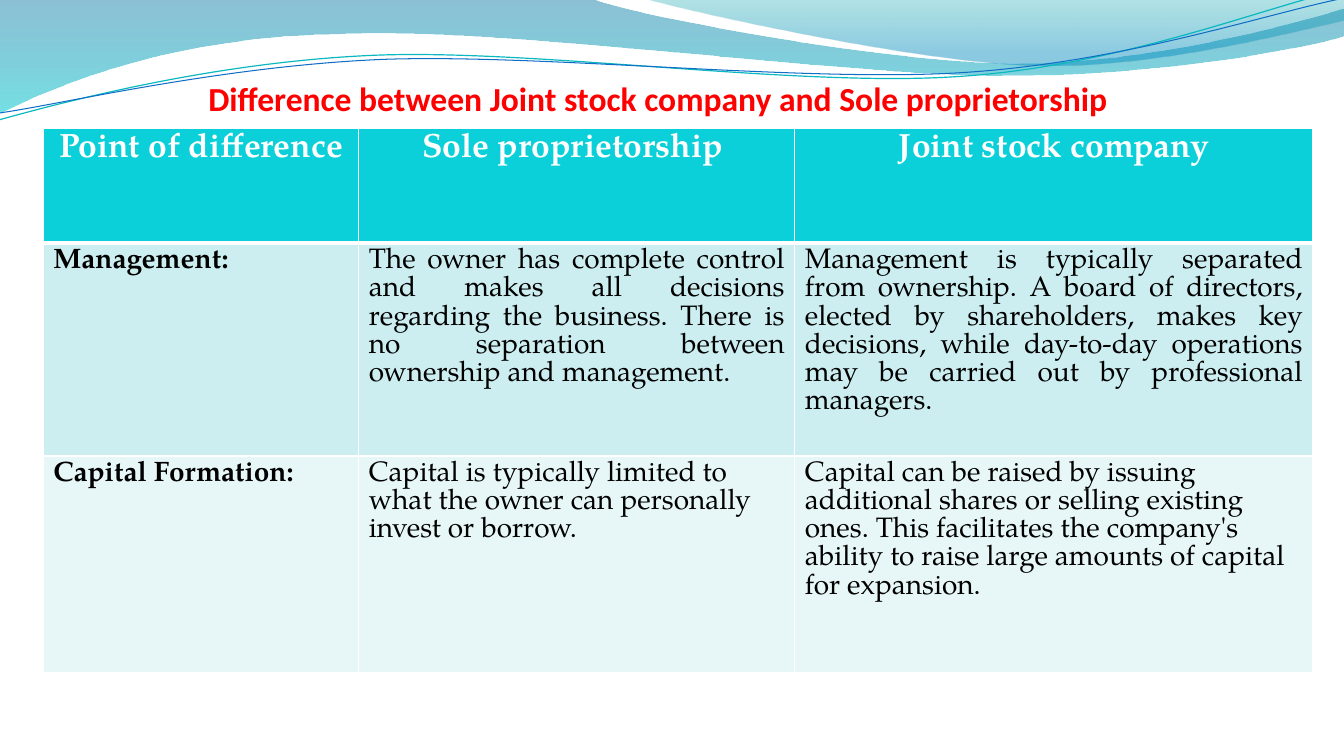
from math import cos, radians, sin

from lxml import etree
from pptx import Presentation
from pptx.dml.color import RGBColor
from pptx.enum.text import PP_ALIGN
from pptx.oxml.ns import qn
from pptx.util import Cm, Pt

CENTER, JUSTIFY, LEFT = PP_ALIGN.CENTER, PP_ALIGN.JUSTIFY, PP_ALIGN.LEFT
BODY_FONT, TITLE_FONT = "TeX Gyre Pagella", "Calibri"

# Content
TITLE = "Difference between Joint stock company and Sole proprietorship "
ROWS = [
    ("Point of difference", "Sole proprietorship ", "Joint stock company"),
    ("Management:",
     "The owner has complete control and makes all decisions regarding the business. "
     "There is no separation between ownership and management.",
     "Management is typically separated from ownership. A board of directors, elected by "
     "shareholders, makes key decisions, while day-to-day operations may be carried out "
     "by professional managers."),
    ("Capital Formation:",
     "Capital is typically limited to what the owner can personally invest or borrow.",
     "Capital can be raised by issuing additional shares or selling existing ones. This "
     "facilitates the company's ability to raise large amounts of capital for expansion."),
]
COLUMN_WIDTHS = (7.95, 10.99, 13.06)
# Height, fill, alignment, text size, text colour, bottom border of each row
ROW_STYLES = [
    (2.9, "0BD0D9", CENTER, 24, "FFFFFF", 3),
    (5.36, "CCEEF1", JUSTIFY, 20, "000000", 1),
    (5.46, "E7F7F8", LEFT, 20, "000000", 1),
]

# Outlines in inches: a pair is a straight step, six numbers are a Bézier step
WAVES = [
    ([(0, 0), (5.87, -0.01), (6.34, 0.17, 8.85, 0.63, 10.11, 0.63),
      (11.38, 0.63, 12.78, 0.26, 13.33, 0.09), (13.35, 0.36),
      (13.11, 0.44, 11.6, 0.76, 9.94, 0.75), (8.29, 0.75, 5.09, 0.28, 3.43, 0.34),
      (1.72, 0.36, 0.61, 0.83, -0.01, 1.13)],
     [(0, "0074A1", 45), (1, "00C6CF", 55)]),
    ([(6.39, -0.01), (6.79, 0.11, 9.09, 0.62, 10.25, 0.65),
      (11.41, 0.69, 12.82, 0.32, 13.33, 0.21), (13.33, 0)],
     [(0, "00A1A9", 30), (0.8, "008BBF", 45)]),
]
STRANDS = [
    ([(-0.01, 1.19), (0.64, 1.01, 2.11, 0.62, 3.69, 0.55),
      (5.27, 0.48, 7.9, 0.87, 9.5, 0.76), (11.1, 0.66, 12.52, 0.08, 13.31, -0.1)],
     "0AB8BF", 0.85),
    ([(0, 1.12), (0.63, 1.03, 2.18, 0.66, 3.78, 0.59),
      (5.37, 0.53, 7.96, 0.82, 9.55, 0.72), (11.15, 0.62, 12.55, 0.14, 13.34, -0.02)],
     "0F6FC6", 0.75),
]
STRAND_TILT = -2.7
STRAND_CENTER = (6.66, 0.57)


def color(hex_string):
    return RGBColor.from_string(hex_string)


def write(frame, text, *, size, font, ink, bold=False, align=LEFT):
    paragraph = frame.paragraphs[0]
    paragraph.alignment = align
    run = paragraph.add_run()
    run.text = text
    run.font.size, run.font.name, run.font.bold = Pt(size), font, bold
    run.font.color.rgb = color(ink)


def place(step, tilt):
    """Give the points of a step in slide units, with the tilt taken out."""
    center_x, center_y = STRAND_CENTER
    angle = radians(-tilt)
    points = []
    for x, y in zip(step[::2], step[1::2]):
        dx, dy = x - center_x, y - center_y
        points.append((Cm(2.54 * (center_x + dx * cos(angle) - dy * sin(angle))),
                       Cm(2.54 * (center_y + dx * sin(angle) + dy * cos(angle)))))
    return points


def add_outline(slide, steps, *, close, tilt=0):
    start, *segments = [place(step, tilt) for step in steps]
    builder = slide.shapes.build_freeform(*start[0])
    builder.add_line_segments([points[-1] for points in segments], close=close)
    shape = builder.convert_to_shape()
    # Bend the segments that have control points
    lines = list(shape._element.iter(qn("a:lnTo")))
    for line, points in zip(lines, segments):
        if len(points) == 3:
            curve = etree.Element(qn("a:cubicBezTo"))
            for x, y in points:
                etree.SubElement(curve, qn("a:pt"),
                                 x=str(x - shape.left), y=str(y - shape.top))
            line.getparent().replace(line, curve)
    shape.rotation = tilt
    shape.shadow.inherit = False
    return shape


def add_wave(slide, steps, stops):
    wave = add_outline(slide, steps, close=True)
    wave.line.fill.background()
    wave.fill.gradient()
    wave.fill.gradient_angle = 270
    for stop, (position, tint, _) in zip(wave.fill.gradient_stops, stops):
        stop.position = position
        stop.color.rgb = color(tint)
    tints = list(wave._element.spPr.iter(qn("a:srgbClr")))
    for tint_xml, (_, _, opacity) in zip(tints, stops):
        etree.SubElement(tint_xml, qn("a:alpha"), val=str(opacity * 1000))


def add_strand(slide, steps, ink, width):
    strand = add_outline(slide, steps, close=False, tilt=STRAND_TILT)
    strand.fill.background()
    strand.line.color.rgb = color(ink)
    strand.line.width = Pt(width)


def set_borders(cell, widths):
    properties = cell._tc.get_or_add_tcPr()
    for index, (side, width) in enumerate(widths.items()):
        border = etree.Element(qn(f"a:ln{side}"), w=str(Pt(width)))
        fill = etree.SubElement(border, qn("a:solidFill"))
        etree.SubElement(fill, qn("a:srgbClr"), val="FFFFFF")
        properties.insert(index, border)


def add_comparison(slide):
    table = slide.shapes.add_table(
        len(ROWS), len(COLUMN_WIDTHS), Cm(1.09), Cm(3.23), Cm(sum(COLUMN_WIDTHS)),
        Cm(sum(style[0] for style in ROW_STYLES))).table
    for column, width in zip(table.columns, COLUMN_WIDTHS):
        column.width = Cm(width)
    top_border = 1
    for r, (texts, style) in enumerate(zip(ROWS, ROW_STYLES)):
        height, fill, align, size, ink, bottom_border = style
        table.rows[r].height = Cm(height)
        for c, text in enumerate(texts):
            cell = table.cell(r, c)
            cell.fill.solid()
            cell.fill.fore_color.rgb = color(fill)
            set_borders(cell, {"L": 1, "R": 1, "T": top_border, "B": bottom_border})
            write(cell.text_frame, text, size=size, font=BODY_FONT, ink=ink,
                  bold=r == 0 or c == 0, align=align)
        top_border = bottom_border


def main():
    deck = Presentation()
    deck.slide_width, deck.slide_height = Cm(33.87), Cm(19.05)
    slide = deck.slides.add_slide(deck.slide_layouts[6])

    # Waves along the top edge
    for steps, stops in WAVES:
        add_wave(slide, steps, stops)
    for steps, ink, width in STRANDS:
        add_strand(slide, steps, ink, width)

    # Table and title
    add_comparison(slide)
    title = slide.shapes.add_textbox(Cm(5), Cm(1.85), Cm(26.14), Cm(1.27)).text_frame
    title.word_wrap = True
    write(title, TITLE, size=24, font=TITLE_FONT, ink="FF0000", bold=True, align=JUSTIFY)

    deck.save("out.pptx")


if __name__ == "__main__":
    main()
